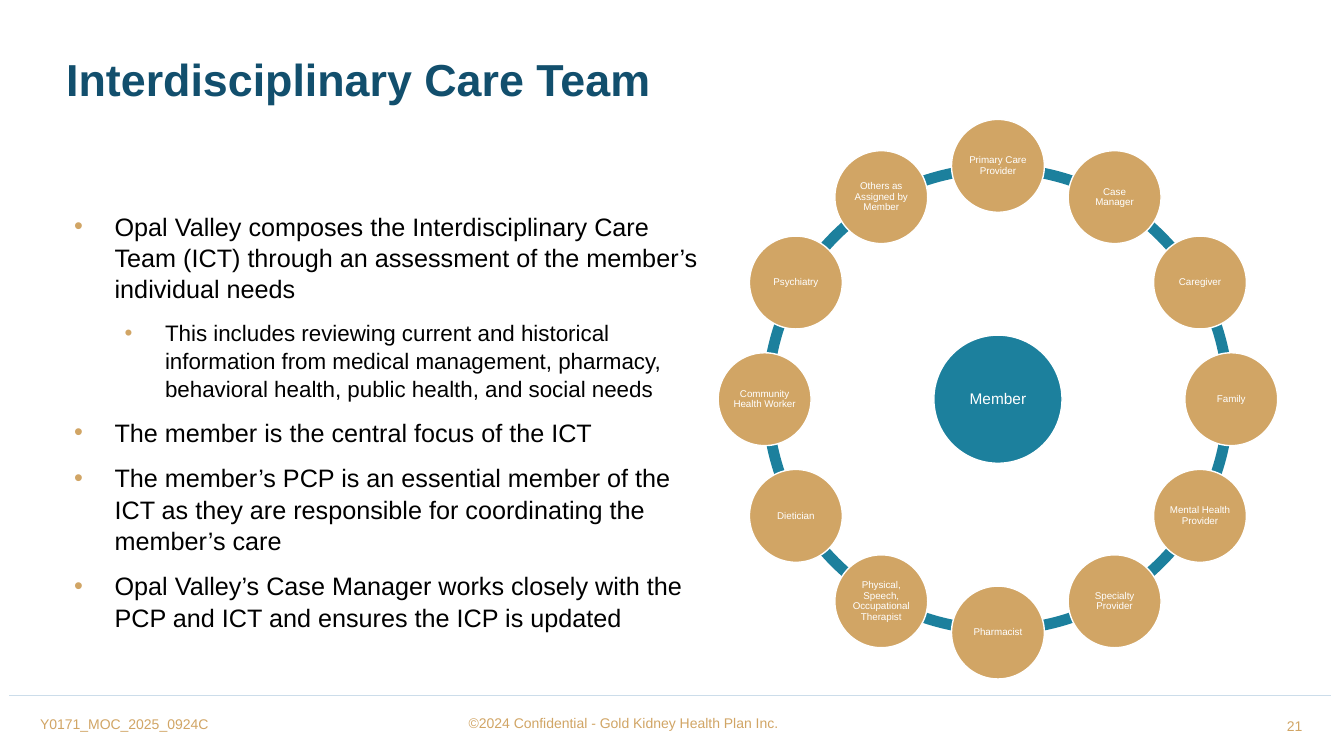
from math import cos, radians, sin

from lxml.etree import SubElement
from pptx import Presentation
from pptx.dml.color import RGBColor
from pptx.enum.shapes import MSO_CONNECTOR, MSO_SHAPE as SHAPE
from pptx.enum.text import MSO_ANCHOR as ANCHOR, PP_ALIGN as ALIGN
from pptx.oxml.ns import qn
from pptx.util import Cm, Pt

COLORS = {
    "navy": "124F6D",
    "teal": "1C809D",
    "gold": "D1A565",
    "rule": "CCDDEA",
    "black": "000000",
    "white": "FFFFFF",
}
RING_X, RING_Y = 25.15, 10.06  # centre of the care team ring, in cm
RING_SIZE = 11.89
TEAM_RADIUS = 5.88

# Clockwise from the top
TEAM = [
    "Primary Care Provider", "Case Manager", "Caregiver", "Family",
    "Mental Health Provider", "Specialty Provider", "Pharmacist",
    "Physical, Speech, Occupational Therapist", "Dietician",
    "Community Health Worker", "Psychiatry", "Others as Assigned by Member",
]

# Level and wording
POINTS = [
    (1, "Opal Valley composes the Interdisciplinary Care Team (ICT) through "
        "an assessment of the member’s individual needs"),
    (2, "This includes reviewing current and historical information from "
        "medical management, pharmacy, behavioral health, public health, "
        "and social needs"),
    (1, "The member is the central focus of the ICT"),
    (1, "The member’s PCP is an essential member of the ICT as they are "
        "responsible for coordinating the member’s care"),
    (1, "Opal Valley’s Case Manager works closely with the PCP and ICT and "
        "ensures the ICP is updated"),
]


def rgb(name):
    return RGBColor.from_string(COLORS[name])


def style(paragraph, size, color, bold=False):
    font = paragraph.font
    font.name = "Arial"
    font.size = Pt(size)
    font.bold = bold
    font.color.rgb = rgb(color)


def add_label(slide, text, box, size, color, bold=False, align=ALIGN.LEFT,
              anchor=ANCHOR.TOP, wrap=True):
    frame = slide.shapes.add_textbox(*map(Cm, box)).text_frame
    frame.word_wrap = wrap
    frame.vertical_anchor = anchor
    line = frame.paragraphs[0]
    line.text = text
    line.alignment = align
    style(line, size, color, bold)
    return line


def add_bullet(paragraph, level):
    props = paragraph._p.get_or_add_pPr()
    props.set("marL", str(Cm(1.27 * level)))
    props.set("indent", str(Cm(-1.02)))
    bullet_color = SubElement(props, qn("a:buClr"))
    SubElement(bullet_color, qn("a:srgbClr"), val=COLORS["gold"])
    SubElement(props, qn("a:buFont"), typeface="Arial")
    SubElement(props, qn("a:buChar"), char="•")


def add_points(slide, points, box):
    frame = slide.shapes.add_textbox(*map(Cm, box)).text_frame
    frame.word_wrap = True
    for i, (level, text) in enumerate(points):
        point = frame.add_paragraph() if i else frame.paragraphs[0]
        point.text = text
        point.level = level - 1
        add_bullet(point, level)
        point.line_spacing = 1.04
        point.space_after = Pt(10)
        style(point, 18 if level == 1 else 16, "black")


def add_centered(slide, kind, x, y, size, color):
    shape = slide.shapes.add_shape(
        kind, Cm(x - size / 2), Cm(y - size / 2), Cm(size), Cm(size))
    shape.shadow.inherit = False
    shape.fill.solid()
    shape.fill.fore_color.rgb = rgb(color)
    return shape


def add_arc(slide, start):
    arc = add_centered(slide, SHAPE.BLOCK_ARC, RING_X, RING_Y, RING_SIZE, "teal")
    arc.line.fill.background()
    # Angles are stored in 60000ths of a degree, scaled by 100000
    arc.adjustments[0] = start * 0.6
    arc.adjustments[1] = (start + 30) % 360 * 0.6
    arc.adjustments[2] = 0.023


def add_circle(slide, text, x, y, size, color, font_size, inset):
    circle = add_centered(slide, SHAPE.OVAL, x, y, size, color)
    circle.line.color.rgb = rgb("white")
    circle.line.width = Pt(1)
    frame = circle.text_frame
    frame.word_wrap = True
    frame.vertical_anchor = ANCHOR.MIDDLE
    frame.margin_left = frame.margin_right = Cm(inset)
    frame.margin_top = frame.margin_bottom = Cm(inset)
    caption = frame.paragraphs[0]
    caption.text = text
    caption.alignment = ALIGN.CENTER
    caption.line_spacing = 0.9
    style(caption, font_size, "white")


def add_care_ring(slide):
    step = 360 // len(TEAM)
    for start in range(0, 360, step):
        add_arc(slide, start)
    add_circle(slide, "Member", RING_X, RING_Y, 3.23, "teal", 11, 0.05)
    for i, role in enumerate(TEAM):
        angle = radians(i * step - 90)
        add_circle(slide, role, RING_X + TEAM_RADIUS * cos(angle),
                   RING_Y + TEAM_RADIUS * sin(angle), 2.34, "gold", 7, 0.03)


def add_rule(slide, x1, x2, y):
    rule = slide.shapes.add_connector(
        MSO_CONNECTOR.STRAIGHT, Cm(x1), Cm(y), Cm(x2), Cm(y))
    rule.line.color.rgb = rgb("rule")
    rule.line.width = Pt(0.5)
    SubElement(rule._element.spPr, qn("a:effectLst"))


def main():
    deck = Presentation()
    deck.slide_width, deck.slide_height = Cm(33.87), Cm(19.05)
    slide = deck.slides.add_slide(deck.slide_layouts[6])

    # Footer
    add_rule(slide, 0.23, 33.55, 17.53)
    add_label(slide, "21", (26.64, 17.81, 6.43, 0.97), 10, "gold",
              align=ALIGN.RIGHT, anchor=ANCHOR.MIDDLE)
    add_label(slide, "©2024 Confidential - Gold Kidney Health Plan Inc.",
              (11.56, 17.86, 10.59, 0.69), 10, "gold", anchor=ANCHOR.MIDDLE)
    add_label(slide, "Y0171_MOC_2025_0924C", (0.76, 17.91, 4.78, 0.69), 10,
              "gold", wrap=False)

    # Title and points
    title = add_label(slide, "Interdisciplinary Care Team",
                      (1.42, 1.32, 28.3, 1.7), 32, "navy", bold=True)
    title.line_spacing = 0.9
    add_points(slide, POINTS, (1.37, 5.16, 16.51, 11.18))

    # Care team around the member
    add_care_ring(slide)

    deck.save("out.pptx")


if __name__ == "__main__":
    main()
